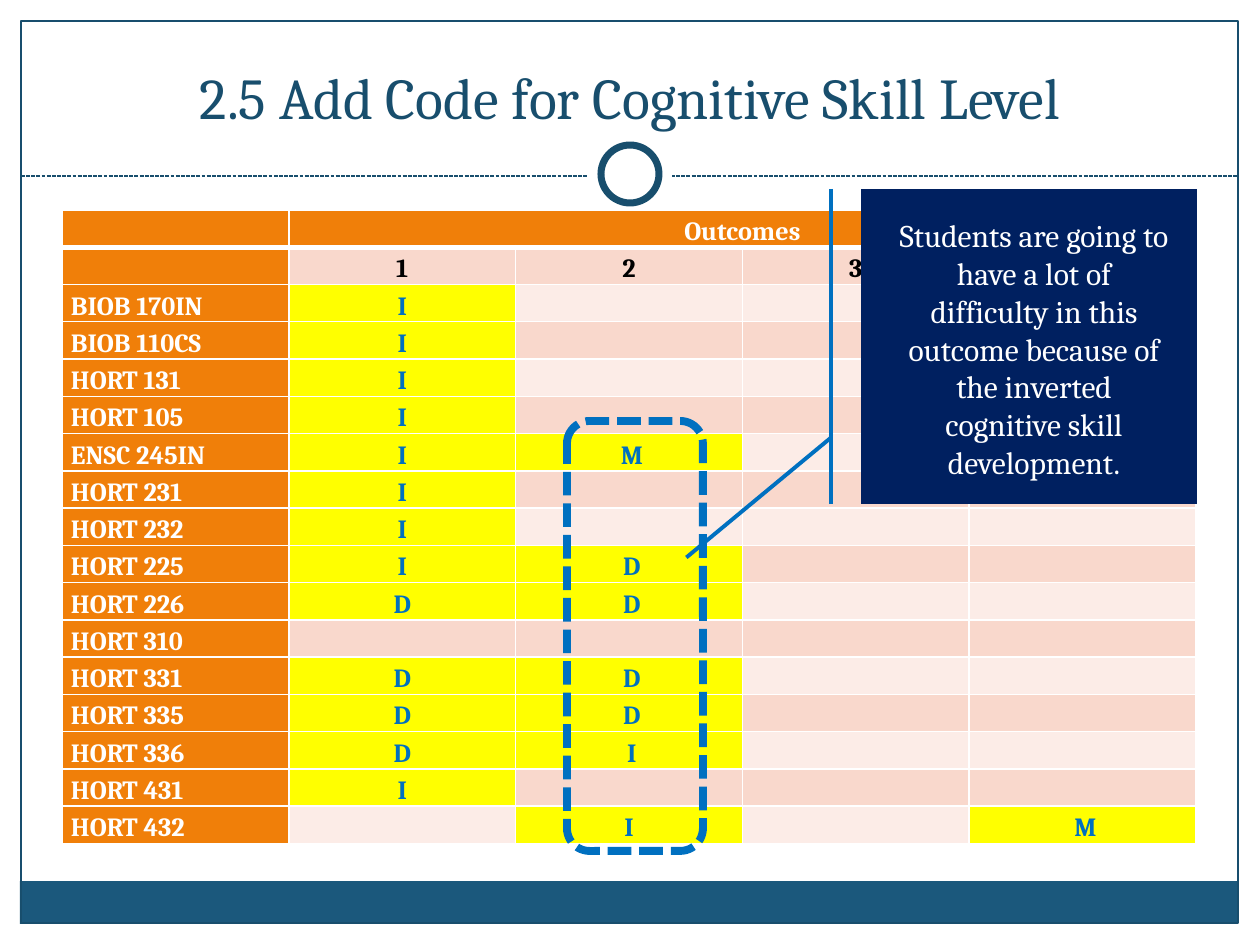
from lxml import etree
from pptx import Presentation
from pptx.dml.color import RGBColor
from pptx.enum import dml, shapes, text
from pptx.oxml import ns
from pptx import util as u

WHITE = RGBColor(0xFF, 0xFF, 0xFF)
BLACK = RGBColor(0x00, 0x00, 0x00)
TEAL = RGBColor(0x18, 0x4E, 0x6D)
FOOTER = RGBColor(0x1B, 0x58, 0x7C)
ORANGE = RGBColor(0xF0, 0x7F, 0x09)
YELLOW = RGBColor(0xFF, 0xFF, 0x00)
BLUE = RGBColor(0x00, 0x70, 0xC0)
NAVY = RGBColor(0x00, 0x20, 0x60)
BANDS = (RGBColor(0xFC, 0xEC, 0xE7), RGBColor(0xF9, 0xD8, 0xCC))

COURSES = [
    ("BIOB 170IN", "I", "", "", ""),
    ("BIOB 110CS", "I", "", "", ""),
    ("HORT 131", "I", "", "", ""),
    ("HORT 105", "I", "", "", ""),
    ("ENSC 245IN", "I", " M", "", ""),
    ("HORT 231", "I", "", "", ""),
    ("HORT 232", "I", "", "", ""),
    ("HORT 225", "I", " D", "", ""),
    ("HORT 226", "D", " D", "", ""),
    ("HORT 310", "", "", "", ""),
    ("HORT 331", "D", " D", "", ""),
    ("HORT 335", "D", " D", "", ""),
    ("HORT 336", "D", " I", "", ""),
    ("HORT 431", "I", "", "", ""),
    ("HORT 432", "", "I", "", " M"),
]


def px(length):
    return u.Inches(length / 126)


class SlideBuilder:
    """Holds the slide and its style, and adds each kind of element."""

    font_name = "Cambria"

    def __init__(self, slide):
        self.slide = slide

    def add_words(self, frame, words, size, color, bold=False, align=text.PP_ALIGN.CENTER):
        paragraph = frame.paragraphs[0]
        paragraph.alignment = align
        run = paragraph.add_run()
        run.text = words
        run.font.name = self.font_name
        run.font.size = u.Pt(size)
        run.font.bold = bold
        run.font.color.rgb = color

    def style_line(self, line, color, width, dash=None):
        line.color.rgb = color
        line.width = u.Pt(width)
        if dash:
            line.dash_style = dash

    def shape(self, kind, box, fill=None, line=None, width=1, dash=None):
        shape = self.slide.shapes.add_shape(kind, *map(px, box))
        shape.shadow.inherit = False
        if fill is None:
            shape.fill.background()
        else:
            shape.fill.solid()
            shape.fill.fore_color.rgb = fill
        if line is None:
            shape.line.fill.background()
        else:
            self.style_line(shape.line, line, width, dash)
        return shape

    def connector(self, start, end, color, width, dash):
        ends = map(px, (*start, *end))
        connector = self.slide.shapes.add_connector(shapes.MSO_CONNECTOR.STRAIGHT, *ends)
        self.style_line(connector.line, color, width, dash)
        etree.SubElement(connector._element.spPr, ns.qn("a:effectLst"))

    def title(self, words, box, size):
        title = self.slide.shapes.title
        title.left, title.top, title.width, title.height = map(px, box)
        frame = title.text_frame
        frame.auto_size = text.MSO_AUTO_SIZE.NONE
        frame.vertical_anchor = text.MSO_ANCHOR.BOTTOM
        self.add_words(frame, words, size, TEAL)
        self.slide.shapes._spTree.append(title._element)

    def text_box(self, words, box, size, color):
        frame = self.slide.shapes.add_textbox(*map(px, box)).text_frame
        frame.word_wrap = True
        self.add_words(frame, words, size, color)

    def borders(self, cell, bottom):
        properties = cell._tc.get_or_add_tcPr()
        widths = {"lnL": 1, "lnR": 1, "lnT": 1, "lnB": bottom}
        for index, (side, width) in enumerate(widths.items()):
            line = etree.Element(ns.qn(f"a:{side}"), w=str(u.Pt(width)))
            fill = etree.SubElement(line, ns.qn("a:solidFill"))
            etree.SubElement(fill, ns.qn("a:srgbClr"), val=str(WHITE))
            properties.insert(index, line)

    def cell(self, cell, words, fill, color, align, bottom):
        cell.fill.solid()
        cell.fill.fore_color.rgb = fill
        cell.margin_left = cell.margin_right = px(9)
        cell.margin_top = cell.margin_bottom = 0
        cell.vertical_anchor = text.MSO_ANCHOR.BOTTOM
        self.borders(cell, bottom)
        paragraph = cell.text_frame.paragraphs[0]
        if words:
            self.add_words(cell.text_frame, words, 15, color, True, align)
            paragraph.line_spacing = 1.15
        else:
            paragraph._p.get_or_add_endParaRPr().set("sz", "1500")

    def outcome_table(self, box):
        rows = [("", "Outcomes", "", "", ""), ("", "1", "2", "3", "4"), *COURSES]
        frame = self.slide.shapes.add_table(len(rows), len(rows[0]), *map(px, box))
        table = frame.table
        table.first_row = table.horz_banding = False
        for row in table.rows:
            row.height = px(box[3] / len(rows))
        for r, row in enumerate(rows):
            for c, words in enumerate(row):
                fill, color, align, bottom = BANDS[r % 2], BLUE, text.PP_ALIGN.CENTER, 1
                if r == 0:
                    fill, color, bottom = ORANGE, WHITE, 3
                elif c == 0:
                    fill, color, align = ORANGE, WHITE, text.PP_ALIGN.LEFT
                elif r == 1:
                    color = BLACK
                elif words:
                    fill = YELLOW
                self.cell(table.cell(r, c), words, fill, color, align, bottom)
        table.cell(0, 1).merge(table.cell(0, len(rows[0]) - 1))


def main():
    presentation = Presentation()
    presentation.slide_width, presentation.slide_height = px(1260), px(945)
    builder = SlideBuilder(presentation.slides.add_slide(presentation.slide_layouts[5]))
    kinds = shapes.MSO_SHAPE
    dash = dml.MSO_LINE.SQUARE_DOT

    for margin in ((0, 0, 1260, 192), (0, 0, 21, 945), (1239, 0, 21, 945)):
        builder.shape(kinds.RECTANGLE, margin, WHITE)
    builder.shape(kinds.RECTANGLE, (20, 881, 1217, 43), FOOTER)
    builder.shape(kinds.RECTANGLE, (21, 21, 1217, 902), line=TEAL, width=0.75)
    builder.connector((21, 176), (1239, 176), TEAL, 0.75, dash)
    builder.shape(kinds.OVAL, (588, 132, 84, 84), WHITE)
    builder.shape(kinds.OVAL, (601, 145, 58, 58), WHITE, TEAL, 4)
    builder.title("2.5 Add Code for Cognitive Skill Level", (42, 32, 1176, 105), 33)
    builder.outcome_table((62, 210, 1134, 634))
    builder.shape(kinds.ROUNDED_RECTANGLE, (567, 421, 136, 430), line=BLUE, width=4.5, dash=dash)
    callout = builder.shape(kinds.LINE_CALLOUT_1_ACCENT_BAR, (861, 189, 336, 315), NAVY, BLUE, 2.25)
    for index, value in enumerate((0.79, -0.09, 1.17, -0.52)):
        callout.adjustments[index] = value
    builder.text_box(
        "Students are going to have a lot of difficulty in this outcome "
        "because of the inverted cognitive skill development.",
        (887, 210, 294, 280), 18, WHITE)
    presentation.save("out.pptx")


if __name__ == "__main__":
    main()
